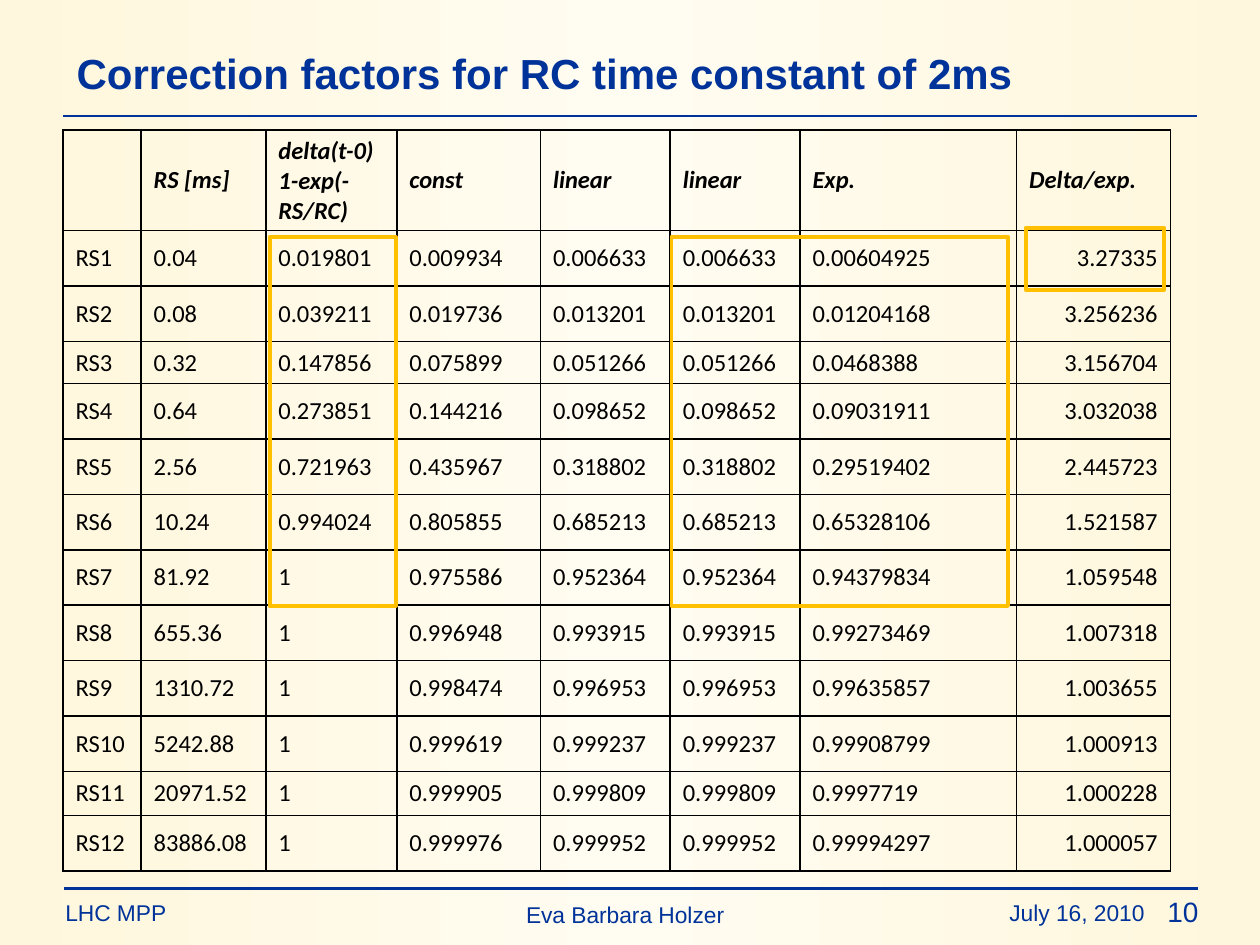
from copy import deepcopy
from dataclasses import dataclass

from lxml import etree
from pptx import Presentation
from pptx.dml.color import RGBColor
from pptx.enum.shapes import MSO_CONNECTOR, MSO_SHAPE
from pptx.enum.text import MSO_ANCHOR, PP_ALIGN
from pptx.oxml.ns import qn
from pptx.util import Inches, Pt

LEFT, CENTER, RIGHT = PP_ALIGN.LEFT, PP_ALIGN.CENTER, PP_ALIGN.RIGHT
TOP, MIDDLE = MSO_ANCHOR.TOP, MSO_ANCHOR.MIDDLE
STRAIGHT, RECTANGLE = MSO_CONNECTOR.STRAIGHT, MSO_SHAPE.RECTANGLE


@dataclass(frozen=True)
class Theme:
    navy: str = "003399"
    black: str = "000000"
    amber: str = "FFC000"
    background: tuple = ("FFF7DD", "FFFCF1", "FFF7DD")
    heading_font: str = "Arial"
    table_font: str = "Calibri"
    title_size: int = 24
    number_size: int = 16
    table_size: int = 14
    footer_size: int = 13
    rule_width: float = 1.5
    frame_width: float = 2.25
    border_width: float = 1


theme = Theme()


def write(para, text, font, size, color, bold=False, italic=False):
    span = para.add_run()
    span.text = text
    span.font.name = font
    span.font.size = Pt(size)
    span.font.color.rgb = RGBColor.from_string(color)
    span.font.bold = bold
    span.font.italic = italic


def add_borders(cell):
    """Draw all four edges of a table cell, ahead of its fill in the XML."""
    properties = cell._tc.get_or_add_tcPr()
    for position, edge in enumerate(("lnL", "lnR", "lnT", "lnB")):
        border = etree.Element(qn(f"a:{edge}"), w=str(Pt(theme.border_width)))
        fill = etree.SubElement(border, qn("a:solidFill"))
        etree.SubElement(fill, qn("a:srgbClr"), val=theme.black)
        properties.insert(position, border)


deck = Presentation()
deck.slide_width, deck.slide_height = Inches(10), Inches(7.5)
page = deck.slides.add_slide(deck.slide_layouts[6])

# Background: light band in the middle
backdrop = page.background.fill
backdrop.gradient()
backdrop.gradient_angle = 0
stop_list = page._element.find(".//" + qn("a:gsLst"))
stop_list.insert(1, deepcopy(stop_list[0]))
for stop, color, position in zip(backdrop.gradient_stops, theme.background, (0, 0.5, 1)):
    stop.color.rgb = RGBColor.from_string(color)
    stop.position = position

# Title, footer and page number
labels = [
    ("Correction factors for RC time constant of 2ms",
     (0.51, 0.24, 8.99, 0.68), LEFT, MIDDLE, theme.title_size, True),
    ("LHC MPP", (0.42, 7.08, 3.7, 0.32), LEFT, TOP, theme.footer_size, False),
    ("Eva Barbara Holzer", (2.42, 7.1, 5.08, 0.32), CENTER, TOP, theme.footer_size, False),
    ("July 16, 2010", (6.26, 7.08, 2.92, 0.32), RIGHT, TOP, theme.footer_size, False),
    ("10", (8.46, 7.05, 1.15, 0.37), RIGHT, TOP, theme.number_size, False),
]
for text, place, alignment, anchor, size, bold in labels:
    box = page.shapes.add_textbox(*map(Inches, place))
    box.text_frame.word_wrap = True
    box.text_frame.vertical_anchor = anchor
    para = box.text_frame.paragraphs[0]
    para.alignment = alignment
    write(para, text, theme.heading_font, size, theme.navy, bold)

# Rules under the title and above the footer
for left, top in ((0.5, 0.92), (0.51, 7.05)):
    rule = page.shapes.add_connector(
        STRAIGHT, Inches(left), Inches(top), Inches(left + 9), Inches(top))
    rule.line.color.rgb = RGBColor.from_string(theme.navy)
    rule.line.width = Pt(theme.rule_width)
    etree.SubElement(rule._element.spPr, qn("a:effectLst"))

# Table of correction factors
header = ["", "RS [ms]", "delta(t-0)\n1-exp(-RS/RC)", "const", "linear", "linear",
          "Exp.", "Delta/exp."]
# RS [ms], delta, const, linear, exp, delta/exp
factors = [
    ("0.04", "0.019801", "0.009934", "0.006633", "0.00604925", "3.27335"),
    ("0.08", "0.039211", "0.019736", "0.013201", "0.01204168", "3.256236"),
    ("0.32", "0.147856", "0.075899", "0.051266", "0.0468388", "3.156704"),
    ("0.64", "0.273851", "0.144216", "0.098652", "0.09031911", "3.032038"),
    ("2.56", "0.721963", "0.435967", "0.318802", "0.29519402", "2.445723"),
    ("10.24", "0.994024", "0.805855", "0.685213", "0.65328106", "1.521587"),
    ("81.92", "1", "0.975586", "0.952364", "0.94379834", "1.059548"),
    ("655.36", "1", "0.996948", "0.993915", "0.99273469", "1.007318"),
    ("1310.72", "1", "0.998474", "0.996953", "0.99635857", "1.003655"),
    ("5242.88", "1", "0.999619", "0.999237", "0.99908799", "1.000913"),
    ("20971.52", "1", "0.999905", "0.999809", "0.9997719", "1.000228"),
    ("83886.08", "1", "0.999976", "0.999952", "0.99994297", "1.000057"),
]
rows = [header]
for number, (time, delta, const, linear, exp, ratio) in enumerate(factors, 1):
    rows.append([f"RS{number}", time, delta, const, linear, linear, exp, ratio])

column_widths = [0.62, 0.99, 1.04, 1.14, 1.03, 1.03, 1.72, 1.22]
special_heights = {0: 0.78, 3: 0.33, 11: 0.35}
table = page.shapes.add_table(
    len(rows), len(header), Inches(0.5), Inches(1.03), Inches(8.79), Inches(5.91)).table
table.first_row = False
table.horz_banding = False
for column, width in zip(table.columns, column_widths):
    column.width = Inches(width)

for row_index, row in enumerate(rows):
    table.rows[row_index].height = Inches(special_heights.get(row_index, 0.44))
    is_header = row_index == 0
    for column_index, text in enumerate(row):
        cell = table.cell(row_index, column_index)
        cell.vertical_anchor = MIDDLE
        cell.fill.background()
        add_borders(cell)
        if not text:
            continue
        is_ratio = column_index == len(header) - 1 and not is_header
        for line_index, line in enumerate(text.split("\n")):
            frame = cell.text_frame
            para = frame.add_paragraph() if line_index else frame.paragraphs[0]
            para.alignment = RIGHT if is_ratio else LEFT
            write(para, line, theme.table_font, theme.table_size, theme.black,
                  is_header, is_header)

# Frames around the highlighted values
for place in ((5.33, 1.88, 2.67, 2.93), (8.14, 1.81, 1.1, 0.49), (2.14, 1.88, 1, 2.93)):
    frame = page.shapes.add_shape(RECTANGLE, *map(Inches, place))
    frame.shadow.inherit = False
    frame.fill.background()
    frame.line.color.rgb = RGBColor.from_string(theme.amber)
    frame.line.width = Pt(theme.frame_width)

deck.save("out.pptx")
